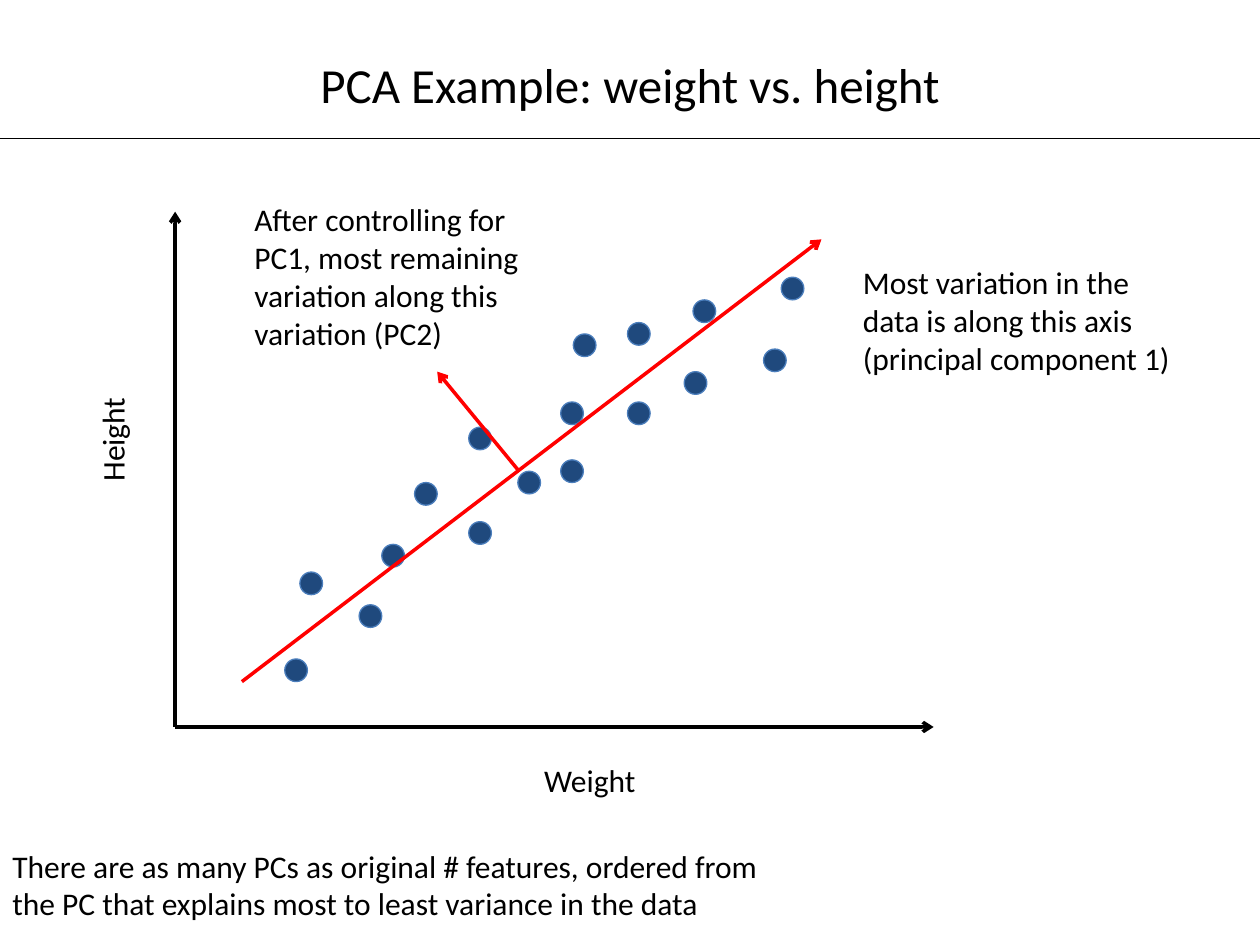
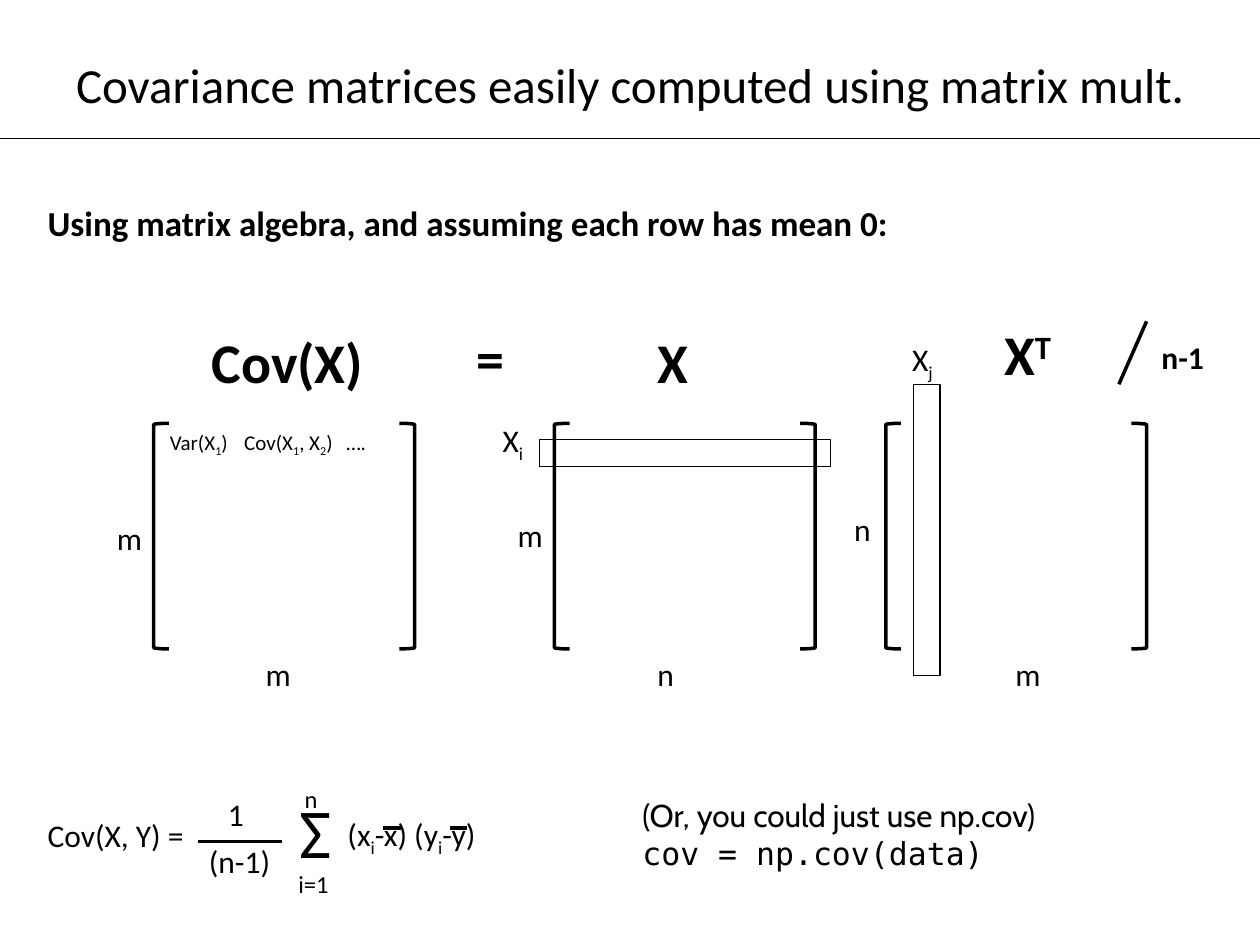
from pptx import Presentation
from pptx.dml.color import RGBColor
from pptx.enum.shapes import MSO_CONNECTOR, MSO_SHAPE
from pptx.enum.text import MSO_ANCHOR, MSO_AUTO_SIZE, PP_ALIGN
from pptx.oxml.ns import qn
from pptx.util import Inches, Pt
from lxml import etree

COLORS = {"ink": "000000", "dot": "1F497D", "dot_edge": "4B7EBC", "component": "FF0000"}
FONT, NOTE_FONT, CODE_FONT = "Calibri", "Cabin", "DejaVu Sans Mono"
TITLE_BOX = (0, 0.38, 10, 0.57)
RULE_Y = 1.1
DOT = 0.18

# Distance right of and above the origin of the axes
DATA = [(0.96, 0.45), (1.08, 1.14), (1.73, 1.36), (1.55, 0.88), (1.99, 1.85),
        (2.42, 1.54), (2.42, 2.29), (2.81, 1.94), (3.15, 2.49), (3.15, 2.03),
        (3.25, 3.03), (3.68, 2.49), (3.68, 3.12), (4.13, 2.73), (4.2, 3.3),
        (4.76, 2.91), (4.9, 3.48)]


def color(name):
    return RGBColor.from_string(COLORS[name])


def write(sp, text, size=18, bold=False, fonts=(FONT,), align=PP_ALIGN.LEFT,
          wrap=False, shift=-25):
    """Fill sp with one paragraph per font; parts between ~ are shifted off the baseline."""
    tf = sp.text_frame
    tf.word_wrap = wrap
    tf.auto_size = MSO_AUTO_SIZE.SHAPE_TO_FIT_TEXT
    tf.vertical_anchor = MSO_ANCHOR.TOP
    for i, (line, font) in enumerate(zip(text.split("\n"), fonts)):
        p = tf.paragraphs[0] if i == 0 else tf.add_paragraph()
        p.alignment = align
        for j, part in enumerate(line.split("~")):
            if not part:
                continue
            r = p.add_run()
            r.text = part
            r.font.size, r.font.bold, r.font.name = Pt(size), bold, font
            r.font.color.rgb = color("ink")
            if j % 2:
                r.font._element.set("baseline", str(shift * 1000))


def label(s, text, x, y, w, h=0.4, rotation=0, **fmt):
    sp = s.shapes.add_textbox(Inches(x), Inches(y), Inches(w), Inches(h))
    sp.rotation = rotation
    write(sp, text, **fmt)


def line(s, x1, y1, x2, y2, ink="ink", width=2, arrow=False):
    c = s.shapes.add_connector(MSO_CONNECTOR.STRAIGHT, Inches(x1), Inches(y1),
                               Inches(x2), Inches(y2))
    c.line.color.rgb = color(ink)
    c.line.width = Pt(width)
    if arrow:
        etree.SubElement(c.line._get_or_add_ln(), qn("a:tailEnd"), type="arrow")
    etree.SubElement(c._element.spPr, qn("a:effectLst"))


def shape(s, kind, x, y, w, h, fill=None, ink="ink", width=0.75):
    sp = s.shapes.add_shape(kind, Inches(x), Inches(y), Inches(w), Inches(h))
    sp.shadow.inherit = False
    if fill:
        sp.fill.solid()
        sp.fill.fore_color.rgb = color(fill)
    else:
        sp.fill.background()
    sp.line.color.rgb = color(ink)
    sp.line.width = Pt(width)


def titled_slide(prs, title):
    s = prs.slides.add_slide(prs.slide_layouts[5])
    sp = s.shapes.title
    sp.left, sp.top, sp.width, sp.height = map(Inches, TITLE_BOX)
    write(sp, title, size=28, align=PP_ALIGN.CENTER, wrap=True)
    line(s, 0, RULE_Y, 10, RULE_Y, width=0.75)
    return s


def scatter(s, x, y, w, h):
    """Draw the axes, the points and both components; x, y is the top left of the axes."""
    base = y + h

    def arrow(start, end, ink="ink"):
        line(s, x + start[0], base - start[1], x + end[0], base - end[1], ink, arrow=True)

    arrow((0, 0), (w, 0))
    arrow((0, 0), (0, h))
    label(s, "Weight", x + 2.83, base + 0.22, 0.95)
    label(s, "Height", x - 0.94, y + 1.6, 0.88, rotation=270)
    for right, up in DATA:
        shape(s, MSO_SHAPE.OVAL, x + right - DOT / 2, base - up - DOT / 2, DOT, DOT,
              fill="dot", ink="dot_edge")
    arrow((0.53, 0.36), (5.13, 3.87), "component")
    arrow((2.73, 2.03), (2.08, 2.82), "component")
    label(s, "Most variation in the data is along this axis (principal component 1)",
          x + 5.36, y + 0.36, 2.67, 1.01, wrap=True)
    label(s, "After controlling for PC1, most remaining variation along this variation (PC2)",
          x + 0.53, y - 0.14, 2.67, 1.31, wrap=True)


def matrix(s, x, y, w, h, name, rows, cols):
    """Draw brackets; name, rows and cols are (text, dx, dy, width) labels."""
    tick = 0.12
    shape(s, MSO_SHAPE.LEFT_BRACKET, x, y, tick, h, width=2)
    shape(s, MSO_SHAPE.RIGHT_BRACKET, x + w - tick, y, tick, h, width=2)
    text, dx, dy, tw = name
    label(s, text, x + dx, y + dy, tw, 0.64, size=32, bold=True, shift=30)
    for text, dx, dy, tw in (rows, cols):
        label(s, text, x + dx, y + dy, tw)


def matrix_product(s, x, y):
    """Draw Cov(X) = X times its transpose / (n-1); x, y is the first bracket's corner."""
    w, h = 2.07, 1.79
    x_mid, x_right = x + 3.18, x + 5.81
    matrix(s, x, y, w, h, ("Cov(X)", 0.36, -0.81, 1.42),
           ("m", -0.39, 0.71, 0.4), ("m", 0.79, h, 0.4))
    matrix(s, x_mid, y, w, h, ("X", 0.72, -0.81, 0.45),
           ("m", -0.39, 0.69, 0.4), ("n", 0.72, h, 0.33))
    matrix(s, x_right, y, w, h, ("X~T~", 0.84, -0.87, 0.61),
           ("n", -0.35, 0.64, 0.33), ("m", 0.93, h, 0.4))
    label(s, "=", x + 2.46, y - 0.84, 0.43, 0.64, size=32, bold=True)

    for text, dx, tw in (("Var(X~1~)", 0.03, 0.68), ("Cov(X~1~, X~2~)", 0.62, 0.9),
                         ("….", 1.43, 0.36)):
        label(s, text, x + dx, y, tw, 0.3, size=12)

    long, thin = 2.31, 0.21
    shape(s, MSO_SHAPE.RECTANGLE, x_mid - 0.12, y + 0.13, long, thin)
    label(s, "X~i~", x_mid - 0.51, y - 0.07, 0.37)
    shape(s, MSO_SHAPE.RECTANGLE, x_right + 0.22, y - 0.31, thin, long)
    label(s, "X~j~", x_right + 0.11, y - 0.71, 0.37)

    line(s, x + 7.66, y - 0.31, x + 7.88, y - 0.81)
    label(s, "n-1", x + 7.9, y - 0.73, 0.54, bold=True)


def covariance_formula(s, x, y):
    label(s, "Cov(X, Y) =", x, y + 0.26, 1.29)
    label(s, "(n-1)", x + 1.28, y + 0.46, 0.69)
    line(s, x + 1.29, y + 0.51, x + 1.96, y + 0.51)
    label(s, "1", x + 1.43, y + 0.09, 0.33)
    label(s, "Σ", x + 2, y + 0.04, 0.46, 0.77, size=40)
    label(s, "i=1", x + 1.99, y + 0.68, 0.44, 0.34, size=14)
    label(s, "n", x + 2.04, y, 0.31, 0.34, size=14)
    label(s, "(x~i~-x) (y~i~-y)", x + 2.38, y + 0.25, 1.23)
    for bar in (2.76, 3.29):
        line(s, x + bar, y + 0.4, x + bar + 0.14, y + 0.4)


def main():
    prs = Presentation()
    prs.slide_width, prs.slide_height = Inches(10), Inches(7.5)

    s = titled_slide(prs, "PCA Example: weight vs. height")
    scatter(s, 1.39, 1.68, 6.02, 4.09)
    label(s, "There are as many PCs as original # features, ordered from "
             "the PC that explains most to least variance in the data",
          0, 6.67, 6.34, 0.71, wrap=True)

    s = titled_slide(prs, "Covariance matrices easily computed using matrix mult.")
    label(s, "Using matrix algebra, and assuming each row has mean 0:",
          0.28, 1.55, 6.94, 0.44, size=20, bold=True)
    matrix_product(s, 1.22, 3.36)
    covariance_formula(s, 0.28, 6.17)
    label(s, "(Or, you could just use np.cov)\ncov = np.cov(data)",
          5, 6.27, 3.36, 0.71, fonts=(NOTE_FONT, CODE_FONT), wrap=True)

    prs.save("out.pptx")


if __name__ == "__main__":
    main()
